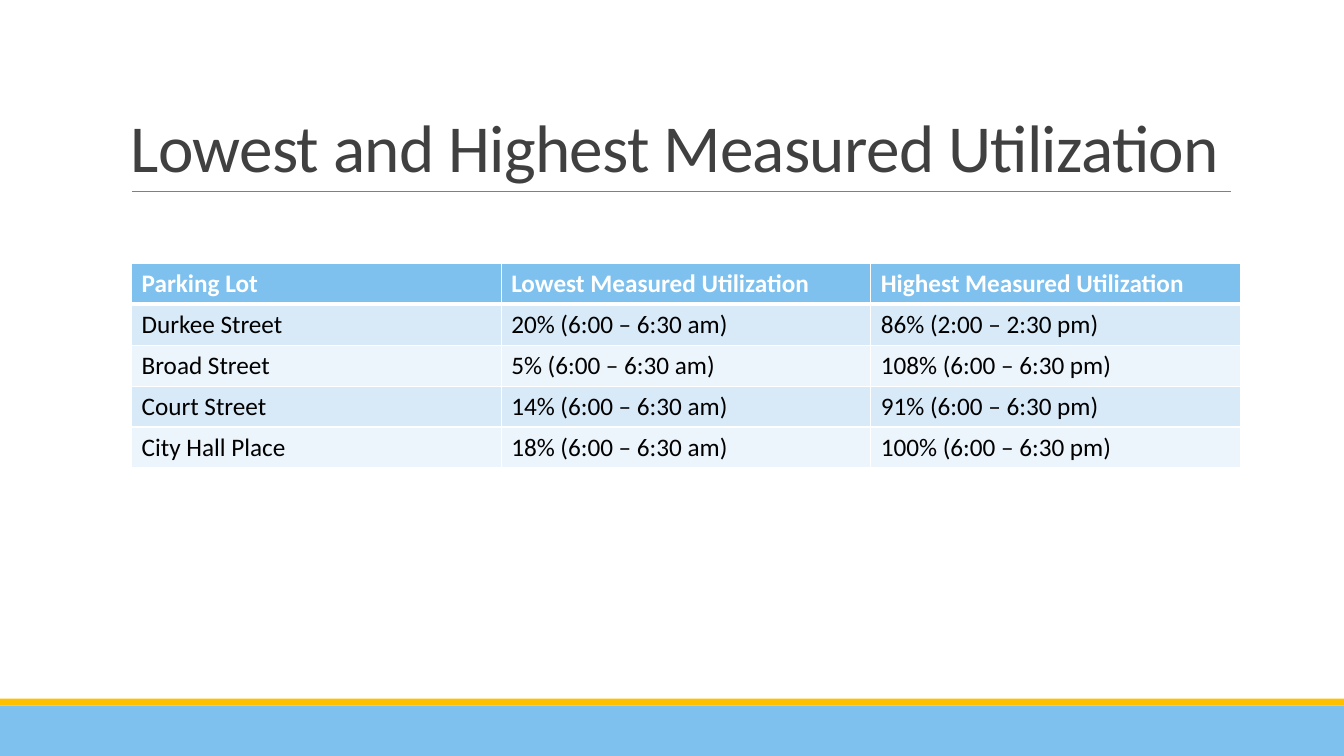
from lxml.etree import SubElement
from pptx import Presentation
from pptx.dml.color import RGBColor
from pptx.enum.shapes import MSO_CONNECTOR as Connector, MSO_SHAPE as Shape
from pptx.enum.text import MSO_ANCHOR as Anchor
from pptx.oxml.ns import qn
from pptx.util import Pt

WHITE = RGBColor(0xFF, 0xFF, 0xFF)
BLACK = RGBColor(0x00, 0x00, 0x00)
SKY = RGBColor(0x7E, 0xC1, 0xEE)
GOLD = RGBColor(0xFF, 0xC0, 0x00)
GRAY = RGBColor(0x80, 0x80, 0x80)
CHARCOAL = RGBColor(0x40, 0x40, 0x40)
ROW_BANDS = (RGBColor(0xD8, 0xE9, 0xF8), RGBColor(0xEC, 0xF4, 0xFC))

FONT = "Calibri"
SLIDE_WIDTH, SLIDE_HEIGHT = 960, 540

TITLE = "Lowest and Highest Measured Utilization"
UTILIZATION = (
    ("Parking Lot", "Lowest Measured Utilization", "Highest Measured Utilization"),
    ("Durkee Street", "20% (6:00 – 6:30 am)", "86% (2:00 – 2:30 pm)"),
    ("Broad Street", "5% (6:00 – 6:30 am)", "108% (6:00 – 6:30 pm)"),
    ("Court Street", "14% (6:00 – 6:30 am)", "91% (6:00 – 6:30 pm)"),
    ("City Hall Place", "18% (6:00 – 6:30 am)", "100% (6:00 – 6:30 pm)"),
)


def add_run(paragraph, text, size, color, bold=False):
    run = paragraph.add_run()
    run.text = text
    run.font.name = FONT
    run.font.size = Pt(size)
    run.font.bold = bold
    run.font.color.rgb = color
    return run


def add_footer(slide, left, top, width, height, stripe=5):
    """Blue band with a gold stripe along its upper edge."""
    bands = ((top + stripe, height - stripe, SKY), (top, stripe, GOLD))
    for band_top, band_height, color in bands:
        band = slide.shapes.add_shape(
            Shape.RECTANGLE, Pt(left), Pt(band_top), Pt(width), Pt(band_height))
        band.shadow.inherit = False
        band.fill.solid()
        band.fill.fore_color.rgb = color
        band.line.fill.background()


def add_title(slide, left, top, width, height):
    """Title standing on a thin rule."""
    bottom = top + height
    rule = slide.shapes.add_connector(
        Connector.STRAIGHT, Pt(left + 7.9), Pt(bottom), Pt(left + width + 0.7), Pt(bottom))
    rule.line.color.rgb = GRAY
    rule.line.width = Pt(0.5)
    SubElement(rule.element.spPr, qn("a:effectLst"))

    box = slide.shapes.add_textbox(Pt(left), Pt(top), Pt(width), Pt(height))
    frame = box.text_frame
    frame.word_wrap = True
    frame.vertical_anchor = Anchor.BOTTOM
    paragraph = frame.paragraphs[0]
    paragraph.line_spacing = 0.85
    run = add_run(paragraph, TITLE, 48, CHARCOAL)
    run.font._element.set("spc", "-50")


def set_borders(cell, top, bottom):
    """White cell borders, widths in points."""
    properties = cell._tc.get_or_add_tcPr()
    for side, width in (("L", 1), ("R", 1), ("T", top), ("B", bottom)):
        line = SubElement(properties, qn(f"a:ln{side}"), w=str(Pt(width)))
        fill = SubElement(line, qn("a:solidFill"))
        SubElement(fill, qn("a:srgbClr"), val=str(WHITE))


def add_utilization_table(slide, left, top, width, height):
    row_count, column_count = len(UTILIZATION), len(UTILIZATION[0])
    table = slide.shapes.add_table(
        row_count, column_count, Pt(left), Pt(top), Pt(width), Pt(height)).table
    for column in table.columns:
        column.width = Pt(width / column_count)
    for row_index, values in enumerate(UTILIZATION):
        table.rows[row_index].height = Pt(height / row_count)
        header = row_index == 0
        for column_index, value in enumerate(values):
            cell = table.cell(row_index, column_index)
            # The thick line parts the header from the first row
            set_borders(cell, 3 if row_index == 1 else 1, 3 if header else 1)
            cell.fill.solid()
            cell.fill.fore_color.rgb = SKY if header else ROW_BANDS[(row_index - 1) % 2]
            add_run(cell.text_frame.paragraphs[0], value, 18,
                    WHITE if header else BLACK, header)


def main():
    presentation = Presentation()
    presentation.slide_width = Pt(SLIDE_WIDTH)
    presentation.slide_height = Pt(SLIDE_HEIGHT)
    slide = presentation.slides.add_slide(presentation.slide_layouts[6])
    add_footer(slide, 0, 499, SLIDE_WIDTH, 41)
    add_title(slide, 86.4, 22.6, 792, 114.2)
    add_utilization_table(slide, 94, 188.2, 792, 146)
    presentation.save("out.pptx")


if __name__ == "__main__":
    main()
